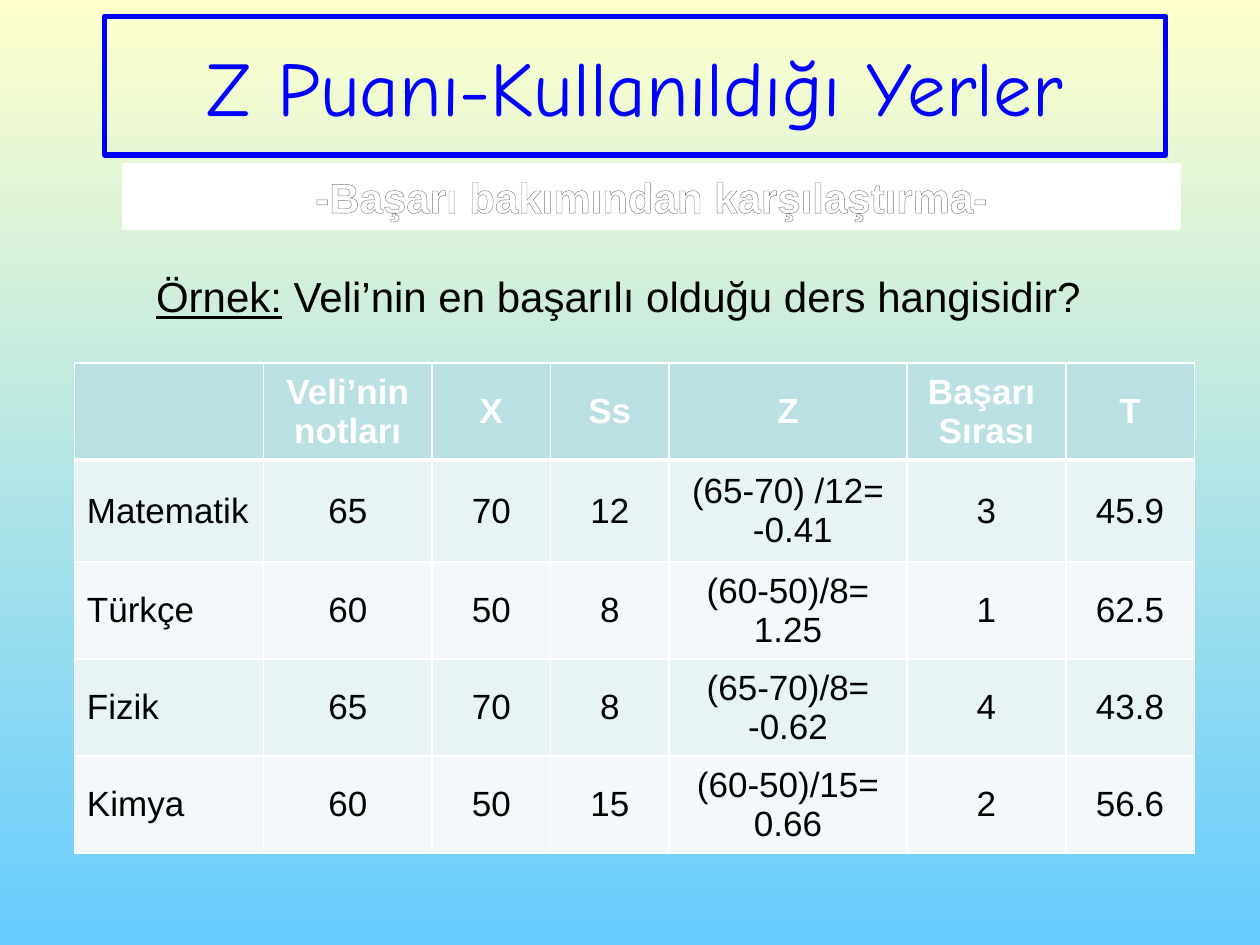
from typing import NamedTuple

from lxml.etree import SubElement
from pptx import Presentation
from pptx.dml.color import RGBColor
from pptx.enum.shapes import MSO_SHAPE
from pptx.enum.text import MSO_ANCHOR as Anchor, MSO_AUTO_SIZE as Auto, PP_ALIGN as Align
from pptx.oxml.ns import qn
from pptx.util import Inches, Pt

BLUE = RGBColor(0x00, 0x00, 0xFF)
WHITE = RGBColor(0xFF, 0xFF, 0xFF)
BLACK = RGBColor(0x00, 0x00, 0x00)
GRAY = RGBColor(0x7F, 0x7F, 0x7F)
EDGE = RGBColor(0x7D, 0x7D, 0x7D)
CREAM = RGBColor(0xFF, 0xFF, 0xCC)
SKY = RGBColor(0x66, 0xCC, 0xFF)
TEAL = RGBColor(0xBB, 0xE0, 0xE3)
BANDS = (RGBColor(0xE7, 0xF3, 0xF4), RGBColor(0xF3, 0xF9, 0xFA))


class Box(NamedTuple):
    left: float
    top: float
    width: float
    height: float

    def lengths(self):
        return [Inches(n) for n in self]


class Grade(NamedTuple):
    course: str
    mark: str
    mean: str
    dev: str
    z: str
    rank: str
    t: str


TITLE = Box(0.83, 0.13, 8.42, 1.1)
BANNER = Box(0.98, 1.31, 8.38, 0.5)
ASK = Box(1.14, 2.1, 7.88, 0.51)
GRID = Box(0.59, 2.88, 8.89, 3.87)
COLS = (1.5, 1.34, 0.94, 0.94, 1.89, 1.26, 1.02)
ROWS = (0.77, 0.81, 0.77, 0.77, 0.77)
HEAD = Grade("", "Veli’nin notları", "X", "Ss", "Z", "Başarı \nSırası", "T")
GRADES = (
    Grade("Matematik", "65", "70", "12", "(65-70) /12=\n -0.41", "3", "45.9"),
    Grade("Türkçe", "60", "50", "8", "(60-50)/8=\n1.25", "1", "62.5"),
    Grade("Fizik", "65", "70", "8", "(65-70)/8=\n-0.62", "4", "43.8"),
    Grade("Kimya", "60", "50", "15", "(60-50)/15=\n0.66", "2", "56.6"),
)


def write(frame, text: str, *, size: float, color=BLACK, font="Arial",
          bold=False, align=Align.LEFT, lead=""):
    """Fill the frame, one paragraph a line; lead is an underlined opening."""
    for i, line in enumerate(text.split("\n")):
        para = frame.paragraphs[0] if i == 0 else frame.add_paragraph()
        para.alignment = align
        parts = [(lead, True)] if lead and i == 0 else []
        for words, under in parts + [(line, False)]:
            run = para.add_run()
            run.text = words
            face = run.font
            face.size, face.name, face.bold = Pt(size), font, bold
            face.underline = under
            face.color.rgb = color


def add_solid(parent, color: RGBColor):
    fill = SubElement(parent, qn("a:solidFill"))
    SubElement(fill, qn("a:srgbClr"), val=str(color))


def shine(run):
    """Give the letters a thin outline and a vertical gradient."""
    props = run.font._element
    props.remove(props.find(qn("a:solidFill")))
    line = SubElement(props, qn("a:ln"), w=str(Pt(0.83)))
    add_solid(line, EDGE)
    grad = SubElement(props, qn("a:gradFill"))
    stops = SubElement(grad, qn("a:gsLst"))
    for pos, color in ((0, WHITE), (9, WHITE), (50, GRAY), (79, WHITE), (100, WHITE)):
        stop = SubElement(stops, qn("a:gs"), pos=str(pos * 1000))
        SubElement(stop, qn("a:srgbClr"), val=str(color))
    SubElement(grad, qn("a:lin"), ang=str(90 * 60000))
    props.insert(0, line)
    props.insert(1, grad)


def rule(cell, top: float, base: float):
    """Draw the four white borders of a cell."""
    props = cell._tc.get_or_add_tcPr()
    for side, width in (("L", 1), ("R", 1), ("T", top), ("B", base)):
        add_solid(SubElement(props, qn(f"a:ln{side}"), w=str(Pt(width))), WHITE)


def place(shape, box: Box):
    shape.left, shape.top, shape.width, shape.height = box.lengths()


def add_title(slide):
    title = slide.shapes.title
    place(title, TITLE)
    title.line.color.rgb = BLUE
    title.line.width = Pt(3.25)
    title.text_frame.vertical_anchor = Anchor.MIDDLE
    write(title.text_frame, "Z Puanı-Kullanıldığı Yerler", size=44, color=BLUE,
          font="Comic Neue", align=Align.CENTER)


def add_banner(slide):
    banner = slide.shapes.add_shape(MSO_SHAPE.RECTANGLE, *BANNER.lengths())
    banner.shadow.inherit = False
    banner.fill.solid()
    banner.fill.fore_color.rgb = WHITE
    banner.line.color.rgb = WHITE
    banner.line.width = Pt(2)
    frame = banner.text_frame
    frame.word_wrap = True
    frame.auto_size = Auto.SHAPE_TO_FIT_TEXT
    frame.vertical_anchor = Anchor.TOP
    write(frame, "-Başarı bakımından karşılaştırma-", size=24, color=WHITE,
          bold=True, align=Align.CENTER)
    shine(frame.paragraphs[0].runs[0])


def add_ask(slide):
    frame = slide.shapes.add_textbox(*ASK.lengths()).text_frame
    frame.word_wrap = True
    frame.auto_size = Auto.SHAPE_TO_FIT_TEXT
    write(frame, " Veli’nin en başarılı olduğu ders hangisidir?", size=24, lead="Örnek:")


def add_grades(slide):
    table = slide.shapes.add_table(len(ROWS), len(COLS), *GRID.lengths()).table
    for col, width in zip(table.columns, COLS):
        col.width = Inches(width)
    for row, height in zip(table.rows, ROWS):
        row.height = Inches(height)
    for r, grade in enumerate((HEAD, *GRADES)):
        head = r == 0
        for c, text in enumerate(grade):
            cell = table.cell(r, c)
            rule(cell, top=3 if r == 1 else 1, base=3 if head else 1)
            cell.fill.solid()
            cell.fill.fore_color.rgb = TEAL if head else BANDS[(r - 1) % 2]
            cell.vertical_anchor = Anchor.MIDDLE
            if text:
                write(cell.text_frame, text, size=20, bold=head,
                      color=WHITE if head else BLACK,
                      align=Align.CENTER if head or c else Align.LEFT)


def main():
    deck = Presentation()
    deck.slide_width, deck.slide_height = Inches(10), Inches(7.5)
    slide = deck.slides.add_slide(deck.slide_layouts.get_by_name("Title Only"))
    back = slide.background.fill
    back.gradient()
    back.gradient_angle = 270
    for stop, color in zip(back.gradient_stops, (CREAM, SKY)):
        stop.color.rgb = color
    add_title(slide)
    add_banner(slide)
    add_grades(slide)
    add_ask(slide)
    deck.save("out.pptx")


if __name__ == "__main__":
    main()
